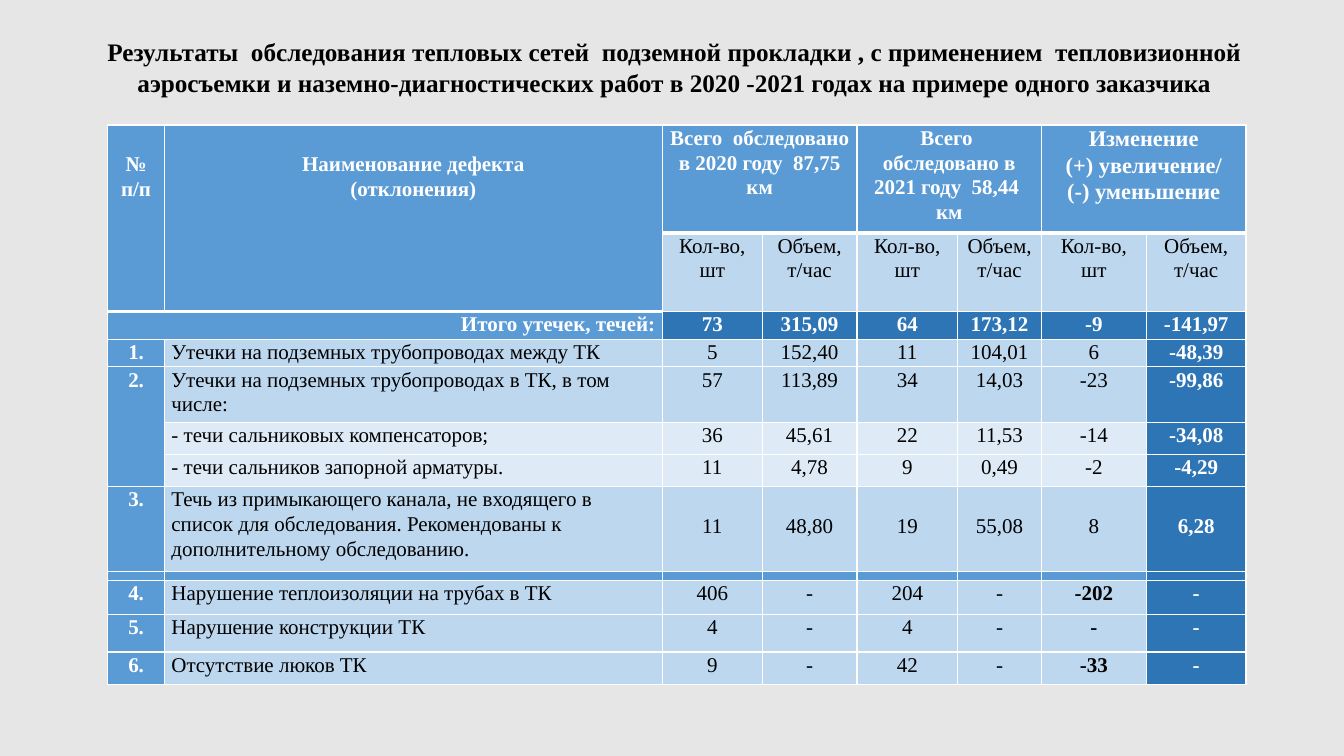
from dataclasses import dataclass

from lxml import etree
from pptx import Presentation
from pptx.dml.color import RGBColor
from pptx.enum.text import MSO_ANCHOR, MSO_AUTO_SIZE, PP_ALIGN
from pptx.oxml.ns import qn
from pptx.util import Inches, Pt

LEFT, CENTER, RIGHT = PP_ALIGN.LEFT, PP_ALIGN.CENTER, PP_ALIGN.RIGHT

# Content
TITLE = ("Результаты  обследования тепловых сетей  подземной прокладки , "
         "с применением  тепловизионной аэросъемки и наземно-диагностических "
         "работ в 2020 -2021 годах на примере одного заказчика")
NUMBER_HEADING = ["№ п/п"]
DEFECT_HEADING = ["Наименование дефекта", "(отклонения)"]
GROUP_HEADINGS = [
    ["Всего  обследовано в 2020 году  87,75 км"],
    ["Всего  обследовано в 2021 году  58,44  км"],
    ["Изменение", "(+) увеличение/", "(-) уменьшение"],
]
MEASURES = [["Кол-во,", "шт"], ["Объем,", "т/час"]]
TOTAL = ("Итого утечек, течей:", "73", "315,09", "64", "173,12", "-9", "-141,97")
DEFECTS = [
    ("1.", "Утечки на подземных трубопроводах между ТК",
     "5", "152,40", "11", "104,01", "6", "-48,39"),
    ("2.", "Утечки на подземных трубопроводах в ТК, в том числе:",
     "57", "113,89", "34", "14,03", "-23", "-99,86"),
    ("", "- течи сальниковых компенсаторов;",
     "36", "45,61", "22", "11,53", "-14", "-34,08"),
    ("", "- течи сальников запорной арматуры.",
     "11", "4,78", "9", "0,49", "-2", "-4,29"),
    ("3.", "Течь из примыкающего канала, не входящего в список для "
           "обследования. Рекомендованы к дополнительному обследованию.",
     "11", "48,80", "19", "55,08", "8", "6,28"),
    ("",) * 8,
    ("4.", "Нарушение теплоизоляции на трубах в ТК",
     "406", "-", "204", "-", "-202", "-"),
    ("5.", "Нарушение конструкции ТК", "4", "-", "4", "-", "-", "-"),
    ("6.", "Отсутствие люков ТК", "9", "-", "42", "-", "-33", "-"),
]

# Grid, in inches
COLUMNS = [0.56, 4.94, 0.99, 0.94, 1, 0.83, 1.04, 0.99]
ROWS = [1.07, 0.78, 0.28, 0.27, 0.55, 0.32, 0.32, 0.84, 0.09, 0.34, 0.37, 0.32]
TABLE_LEFT, TABLE_TOP = 1.07, 1.24
TITLE_BOX = (0.66, 0.31, 12.06, 0.71)
FIRST_VALUE, CHANGE_COLUMN, LAST_COLUMN = 2, 6, 7
TOTAL_ROW, FIRST_DEFECT = 2, 3
SUBROWS, CHANNEL_ROW, DIVIDER_ROW = (5, 6), 7, 8
SIDE_INSET, LOWERED_INSET = 0.07, 0.26


@dataclass(frozen=True)
class Theme:
    font: str = "Times New Roman"
    background: str = "E7E6E6"
    heading: str = "5B9BD5"
    accent: str = "2E75B6"
    band: str = "BDD7EE"
    subband: str = "DEEBF7"
    dark: str = "000000"
    light: str = "FFFFFF"
    title_size: int = 18
    body_size: int = 15
    change_size: int = 16
    thin: int = 1
    thick: int = 3


THEME = Theme()


def add_run(paragraph, words, size, color, bold):
    run = paragraph.add_run()
    run.text = words
    run.font.name, run.font.size, run.font.bold = THEME.font, Pt(size), bold
    run.font.color.rgb = RGBColor.from_string(color)


def write(cell, lines, color=THEME.dark, bold=False, align=CENTER,
          size=THEME.body_size, lowered=False):
    cell.margin_top = Inches(LOWERED_INSET if lowered else 0)
    for index, words in enumerate(lines):
        frame = cell.text_frame
        paragraph = frame.add_paragraph() if index else frame.paragraphs[0]
        paragraph.alignment, paragraph.line_spacing = align, 1.07
        add_run(paragraph, words, size, color, bold)


def cell_fill(row, column):
    if row >= TOTAL_ROW and column == LAST_COLUMN:
        return THEME.accent
    if row in (0, DIVIDER_ROW) or column == 0 or (column == 1 and row <= TOTAL_ROW):
        return THEME.heading
    if row == TOTAL_ROW:
        return THEME.accent
    return THEME.subband if row in SUBROWS else THEME.band


def draw_borders(cell, row, column):
    heading_end = 0 if column >= FIRST_VALUE else 1
    widths = {"a:lnL": THEME.thin, "a:lnR": THEME.thin,
              "a:lnT": THEME.thick if row == heading_end + 1 else THEME.thin,
              "a:lnB": THEME.thick if row <= heading_end else THEME.thin}
    properties = cell._tc.get_or_add_tcPr()
    for position, (edge, width) in enumerate(widths.items()):
        line = etree.Element(qn(edge), w=str(Pt(width)))
        fill = etree.SubElement(line, qn("a:solidFill"))
        etree.SubElement(fill, qn("a:srgbClr"), val=THEME.light)
        properties.insert(position, line)


presentation = Presentation()
presentation.slide_width, presentation.slide_height = Inches(13.33), Inches(7.5)
slide = presentation.slides.add_slide(presentation.slide_layouts[5])
slide.background.fill.solid()
slide.background.fill.fore_color.rgb = RGBColor.from_string(THEME.background)

# Title
title = slide.shapes.title
title.left, title.top, title.width, title.height = map(Inches, TITLE_BOX)
title.text_frame.word_wrap = True
title.text_frame.auto_size = MSO_AUTO_SIZE.NONE
title.text_frame.vertical_anchor = MSO_ANCHOR.MIDDLE
title_line = title.text_frame.paragraphs[0]
title_line.alignment = CENTER
add_run(title_line, TITLE, THEME.title_size, THEME.dark, True)

# Table grid
table = slide.shapes.add_table(
    len(ROWS), len(COLUMNS), Inches(TABLE_LEFT), Inches(TABLE_TOP),
    Inches(sum(COLUMNS)), Inches(sum(ROWS))).table
for column, width in enumerate(COLUMNS):
    table.columns[column].width = Inches(width)
for row, height in enumerate(ROWS):
    table.rows[row].height = Inches(height)
    for column in range(len(COLUMNS)):
        cell = table.cell(row, column)
        cell.margin_left = cell.margin_right = Inches(SIDE_INSET)
        cell.margin_top = cell.margin_bottom = 0
        cell.fill.solid()
        cell.fill.fore_color.rgb = RGBColor.from_string(cell_fill(row, column))
        draw_borders(cell, row, column)
        if row == DIVIDER_ROW:
            cell.text_frame.paragraphs[0].font.size = Pt(1)

# Merged cells: first corner, last corner
MERGES = [((0, 0), (1, 0)), ((0, 1), (1, 1)), ((TOTAL_ROW, 0), (TOTAL_ROW, 1)),
          ((4, 0), (SUBROWS[-1], 0))]
MERGES += [((0, c), (0, c + 1)) for c in range(FIRST_VALUE, LAST_COLUMN, 2)]
for first, last in MERGES:
    table.cell(*first).merge(table.cell(*last))

# Headings
for column, lines in enumerate([NUMBER_HEADING, DEFECT_HEADING]):
    write(table.cell(0, column), lines, THEME.light, True, lowered=True)
for group, lines in enumerate(GROUP_HEADINGS):
    column = FIRST_VALUE + 2 * group
    size = THEME.change_size if column == CHANGE_COLUMN else THEME.body_size
    write(table.cell(0, column), lines, THEME.light, True, size=size)
    for offset, measure in enumerate(MEASURES):
        write(table.cell(1, column + offset), measure)

# Totals
write(table.cell(TOTAL_ROW, 0), TOTAL[:1], THEME.light, True, RIGHT)
for column, value in enumerate(TOTAL[1:], FIRST_VALUE):
    write(table.cell(TOTAL_ROW, column), [value], THEME.light, True)

# Defects
for row, defect in enumerate(DEFECTS, FIRST_DEFECT):
    for column, words in enumerate(defect):
        if not words:
            continue
        on_dark = column in (0, LAST_COLUMN)
        key_change = column == CHANGE_COLUMN and row > DIVIDER_ROW
        write(table.cell(row, column), [words],
              THEME.light if on_dark else THEME.dark, on_dark or key_change,
              LEFT if column == 1 else CENTER,
              lowered=row == CHANNEL_ROW and column >= FIRST_VALUE)

presentation.save("out.pptx")
